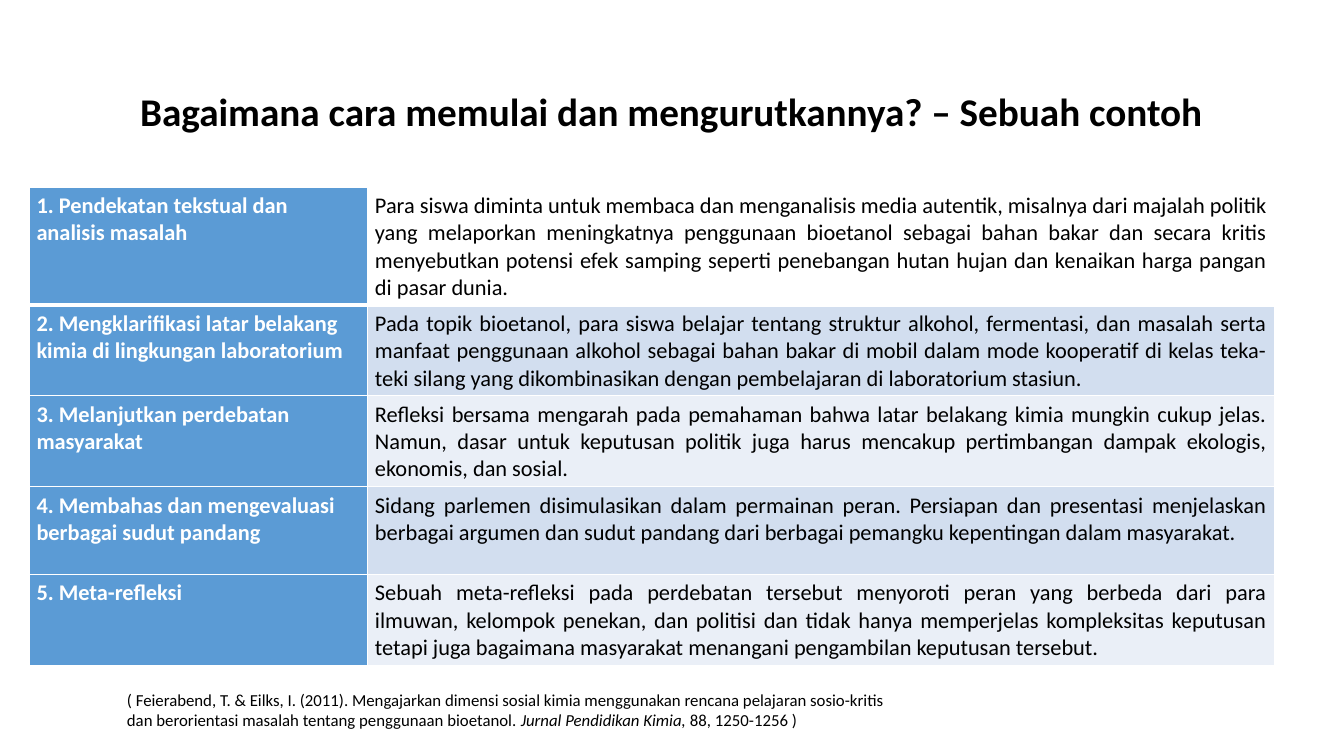
import pptx
import pptx.util
import pptx.dml.color
import pptx.enum.text
import pptx.oxml.ns
from lxml import etree

Cm = pptx.util.Cm
Pt = pptx.util.Pt
RGBColor = pptx.dml.color.RGBColor
Align = pptx.enum.text.PP_ALIGN
Anchor = pptx.enum.text.MSO_ANCHOR
qn = pptx.oxml.ns.qn

BLACK = RGBColor(0x00, 0x00, 0x00)
WHITE = RGBColor(0xFF, 0xFF, 0xFF)
STEP_BLUE = RGBColor(0x5B, 0x9B, 0xD5)
BAND_DARK = RGBColor(0xD2, 0xDE, 0xEF)
BAND_LIGHT = RGBColor(0xEA, 0xEF, 0xF7)
FONT = "Calibri"

TITLE = "Bagaimana cara memulai dan mengurutkannya? – Sebuah contoh"
STEPS = [
    ("1. Pendekatan tekstual dan analisis masalah",
     "Para siswa diminta untuk membaca dan menganalisis media autentik, misalnya dari majalah "
     "politik yang melaporkan meningkatnya penggunaan bioetanol sebagai bahan bakar dan secara "
     "kritis menyebutkan potensi efek samping seperti penebangan hutan hujan dan kenaikan harga "
     "pangan di pasar dunia."),
    ("2. Mengklarifikasi latar belakang kimia di lingkungan laboratorium",
     "Pada topik bioetanol, para siswa belajar tentang struktur alkohol, fermentasi, dan masalah "
     "serta manfaat penggunaan alkohol sebagai bahan bakar di mobil dalam mode kooperatif di "
     "kelas teka-teki silang yang dikombinasikan dengan pembelajaran di laboratorium stasiun."),
    ("3. Melanjutkan perdebatan masyarakat",
     "Refleksi bersama mengarah pada pemahaman bahwa latar belakang kimia mungkin cukup jelas. "
     "Namun, dasar untuk keputusan politik juga harus mencakup pertimbangan dampak ekologis, "
     "ekonomis, dan sosial."),
    ("4. Membahas dan mengevaluasi berbagai sudut pandang",
     "Sidang parlemen disimulasikan dalam permainan peran. Persiapan dan presentasi menjelaskan "
     "berbagai argumen dan sudut pandang dari berbagai pemangku kepentingan dalam masyarakat."),
    ("5. Meta-refleksi",
     "Sebuah meta-refleksi pada perdebatan tersebut menyoroti peran yang berbeda dari para "
     "ilmuwan, kelompok penekan, dan politisi dan tidak hanya memperjelas kompleksitas keputusan "
     "tetapi juga bagaimana masyarakat menangani pengambilan keputusan tersebut."),
]
CITATION = [
    ("( Feierabend, T. & Eilks, I. (2011). Mengajarkan dimensi sosial kimia menggunakan rencana "
     "pelajaran sosio-kritis dan berorientasi masalah tentang penggunaan bioetanol. ", False),
    ("Jurnal Pendidikan Kimia,", True),
    (" 88, 1250-1256 )", False),
]
COLUMN_WIDTHS = (Cm(8.53), Cm(22.86))
FIRST_ROW_HEIGHT, ROW_HEIGHT = Cm(2.75), Cm(2.21)
THIN, THICK = Pt(0.96), Pt(3)


def add_run(paragraph, text, size, color=BLACK, bold=False, italic=False):
    run = paragraph.add_run()
    run.text = text
    run.font.name = FONT
    run.font.size = Pt(size)
    run.font.color.rgb = color
    run.font.bold = bold
    run.font.italic = italic


def add_borders(cell, top, bottom):
    """Draw white cell borders; call before the fill, which must follow them in the XML."""
    properties = cell._tc.get_or_add_tcPr()
    for side, width in (("L", THIN), ("R", THIN), ("T", top), ("B", bottom)):
        line = etree.SubElement(properties, qn("a:ln" + side), w=str(int(width)))
        fill = etree.SubElement(line, qn("a:solidFill"))
        etree.SubElement(fill, qn("a:srgbClr"), val=str(WHITE))


def add_title(slide):
    title = slide.shapes.title
    title.left, title.top, title.width, title.height = Cm(1.02), Cm(1.02), Cm(31.78), Cm(3.68)
    title.text_frame.vertical_anchor = Anchor.MIDDLE
    paragraph = title.text_frame.paragraphs[0]
    paragraph.alignment = Align.CENTER
    paragraph.line_spacing = 0.9
    add_run(paragraph, TITLE, 28, bold=True)


def add_steps_table(slide):
    last = len(STEPS) - 1
    table = slide.shapes.add_table(
        len(STEPS), 2, Cm(0.73), Cm(4.71), sum(COLUMN_WIDTHS),
        FIRST_ROW_HEIGHT + last * ROW_HEIGHT).table
    for column, width in zip(table.columns, COLUMN_WIDTHS):
        column.width = width
    for index, step in enumerate(STEPS):
        table.rows[index].height = ROW_HEIGHT if index else FIRST_ROW_HEIGHT
        band = (BAND_DARK if index % 2 else BAND_LIGHT) if index else WHITE
        looks = ((STEP_BLUE, WHITE, True, Align.LEFT), (band, BLACK, False, Align.JUSTIFY))
        for position, (text, look) in enumerate(zip(step, looks)):
            fill_color, text_color, bold, alignment = look
            cell = table.cell(index, position)
            add_borders(cell, THICK if index == 1 else THIN, THICK if index == 0 else THIN)
            cell.fill.solid()
            cell.fill.fore_color.rgb = fill_color
            cell.margin_left = cell.margin_right = Cm(0.19)
            cell.margin_top = cell.margin_bottom = Cm(0.13)
            paragraph = cell.text_frame.paragraphs[0]
            paragraph.alignment = alignment
            paragraph.space_after = Pt(0 if index == last and position else 3)
            add_run(paragraph, text, 16, text_color, bold)


def add_citation(slide):
    box = slide.shapes.add_textbox(Cm(2.95), Cm(17.25), Cm(20.29), Cm(1.27))
    box.text_frame.word_wrap = True
    for text, italic in CITATION:
        add_run(box.text_frame.paragraphs[0], text, 12, italic=italic)


def main():
    presentation = pptx.Presentation()
    presentation.slide_width, presentation.slide_height = Cm(33.87), Cm(19.05)
    slide = presentation.slides.add_slide(presentation.slide_layouts[5])
    add_title(slide)
    add_citation(slide)
    add_steps_table(slide)
    presentation.save("out.pptx")


if __name__ == "__main__":
    main()
